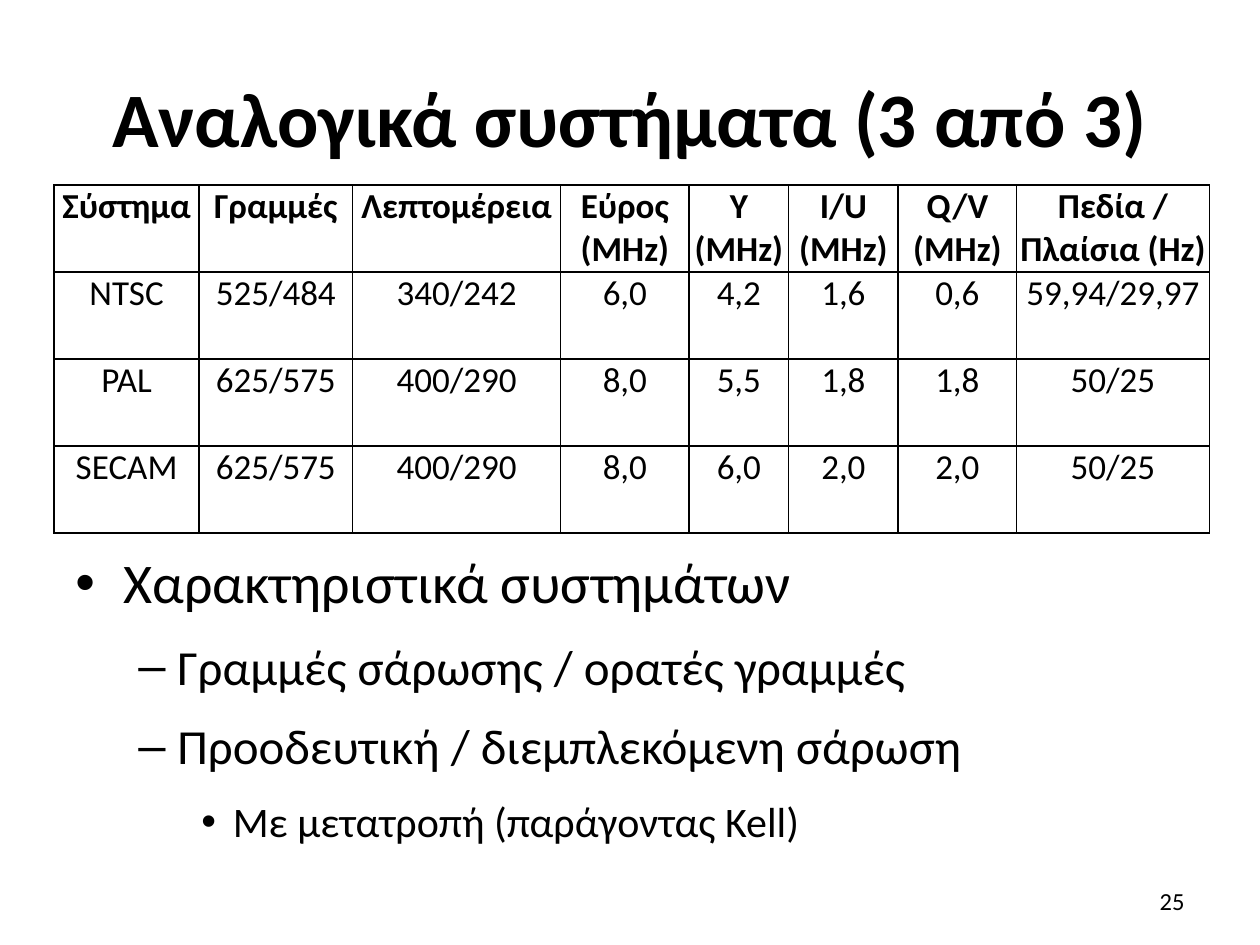
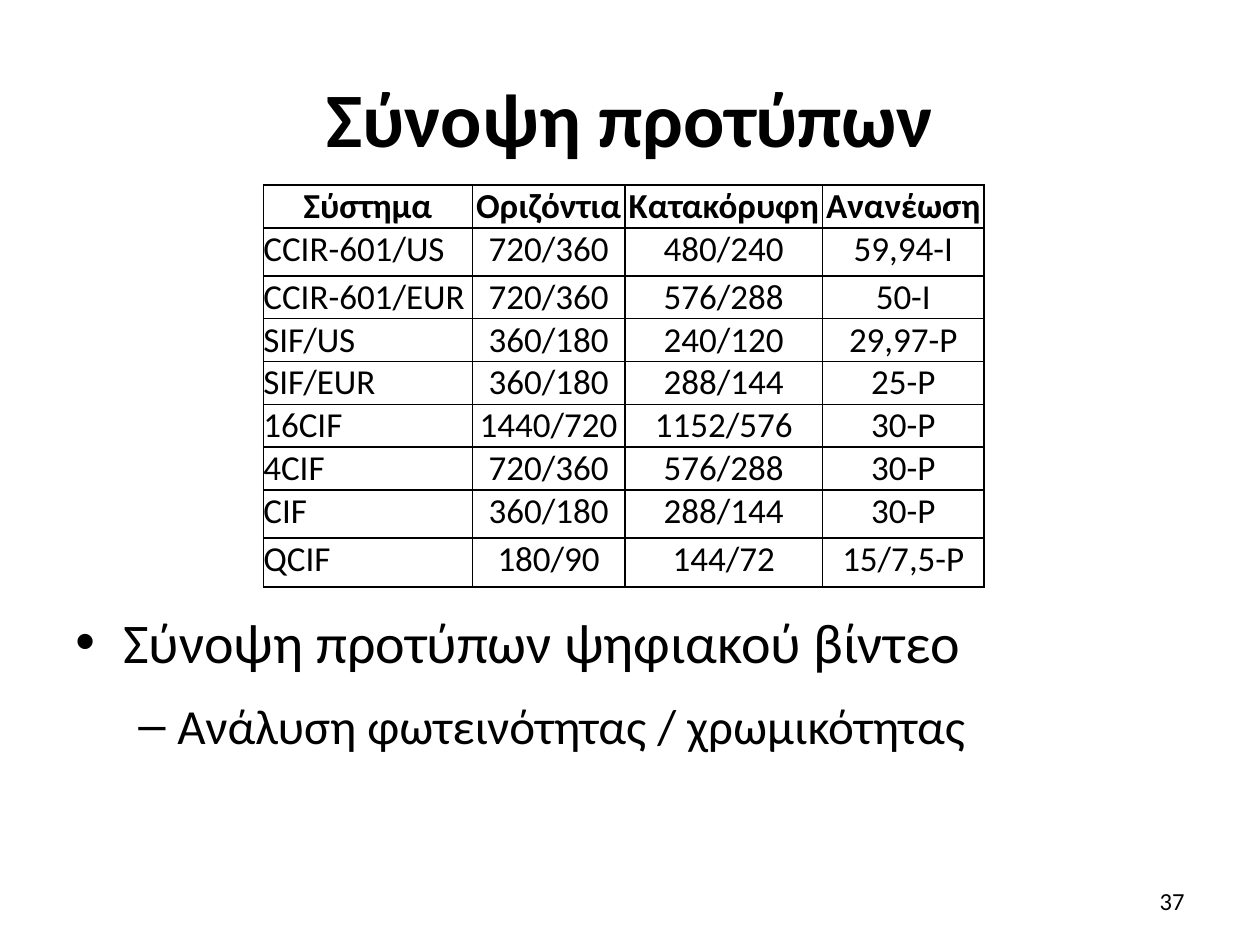
from dataclasses import dataclass
from typing import NamedTuple

import pptx
import pptx.dml.color
import pptx.enum.text
import pptx.oxml.ns
import pptx.util
from lxml import etree

PX = 9144
FONT = "Calibri"
BLACK = "000000"
WHITE = "FFFFFF"
ALIGN = pptx.enum.text.PP_ALIGN
ANCHOR = pptx.enum.text.MSO_ANCHOR


class Box(NamedTuple):
    left: int
    top: int
    width: int
    height: int


class Level(NamedTuple):
    bullet: str
    size: int
    margin: int
    hanging: int


class Point(NamedTuple):
    level: int
    text: str


@dataclass
class Grid:
    left: int
    columns: list[int]
    heights: list[int]
    rows: list[list[str]]
    label_align: ALIGN


@dataclass
class Page:
    title: str
    grid: Grid
    body_top: int
    points: list[Point]
    number: int


TITLE_BOX = Box(50, 30, 900, 125)
NUMBER_BOX = Box(717, 695, 233, 40)
GRID_TOP = 147
BODY_BOTTOM = 670
LEVELS = [Level("•", 32, 38, 38), Level("–", 28, 81, 31), Level("•", 24, 125, 25)]

PAGES = [
    Page(
        "Αναλογικά συστήματα (3 από 3)",
        Grid(
            43,
            [115, 122, 165, 102, 79, 87, 94, 153],
            [69] * 4,
            [
                ["Σύστημα", "Γραμμές", "Λεπτομέρεια", "Εύρος (MHz)", "Y (MHz)",
                 "I/U (MHz)", "Q/V (MHz)", "Πεδία / Πλαίσια (Hz)"],
                ["NTSC", "525/484", "340/242", "6,0", "4,2", "1,6", "0,6", "59,94/29,97"],
                ["PAL", "625/575", "400/290", "8,0", "5,5", "1,8", "1,8", "50/25"],
                ["SECAM", "625/575", "400/290", "8,0", "6,0", "2,0", "2,0", "50/25"],
            ],
            ALIGN.CENTER,
        ),
        430,
        [
            Point(0, "Χαρακτηριστικά συστημάτων"),
            Point(1, "Γραμμές σάρωσης / ορατές γραμμές"),
            Point(1, "Προοδευτική / διεμπλεκόμενη σάρωση"),
            Point(2, "Με μετατροπή (παράγοντας Kell)"),
        ],
        25,
    ),
    Page(
        "Σύνοψη προτύπων",
        Grid(
            209,
            [166, 121, 157, 128],
            [34, 38, 34, 34, 34, 34, 34, 38, 39],
            [
                ["Σύστημα", "Οριζόντια", "Κατακόρυφη", "Ανανέωση"],
                ["CCIR-601/US", "720/360", "480/240", "59,94-I"],
                ["CCIR-601/EUR", "720/360", "576/288", "50-I"],
                ["SIF/US", "360/180", "240/120", "29,97-P"],
                ["SIF/EUR", "360/180", "288/144", "25-P"],
                ["16CIF", "1440/720", "1152/576", "30-P"],
                ["4CIF", "720/360", "576/288", "30-P"],
                ["CIF", "360/180", "288/144", "30-P"],
                ["QCIF", "180/90", "144/72", "15/7,5-P"],
            ],
            ALIGN.LEFT,
        ),
        477,
        [
            Point(0, "Σύνοψη προτύπων ψηφιακού βίντεο"),
            Point(1, "Ανάλυση φωτεινότητας / χρωμικότητας"),
        ],
        37,
    ),
]


def px(length: int) -> pptx.util.Emu:
    return pptx.util.Emu(length * PX)


def rgb(value: str) -> pptx.dml.color.RGBColor:
    return pptx.dml.color.RGBColor.from_string(value)


def child(parent, tag: str, **attributes: str):
    return etree.SubElement(parent, pptx.oxml.ns.qn(tag), attributes)


def add_run(p, text: str, size: int, bold: bool = False) -> None:
    r = p.add_run()
    r.text = text
    r.font.name = FONT
    r.font.size = pptx.util.Pt(size)
    r.font.bold = bold
    r.font.color.rgb = rgb(BLACK)


def add_box(s, box: Box, anchor: ANCHOR):
    sp = s.shapes.add_textbox(*map(px, box))
    tf = sp.text_frame
    tf.word_wrap = True
    tf.vertical_anchor = anchor
    return tf


def add_line(s, box: Box, text: str, size: int, align: ALIGN, bold: bool = False) -> None:
    p = add_box(s, box, ANCHOR.MIDDLE).paragraphs[0]
    p.alignment = align
    add_run(p, text, size, bold)


def add_points(s, top: int, points: list[Point]) -> None:
    tf = add_box(s, Box(50, top, 900, BODY_BOTTOM - top), ANCHOR.TOP)
    for i, point in enumerate(points):
        level = LEVELS[point.level]
        p = tf.paragraphs[0] if i == 0 else tf.add_paragraph()
        p.level = point.level
        p.space_before = pptx.util.Pt(12)
        pPr = p._p.get_or_add_pPr()
        pPr.set("marL", str(px(level.margin)))
        pPr.set("indent", str(-px(level.hanging)))
        child(pPr, "a:buFont", typeface="Arial")
        child(pPr, "a:buChar", char=level.bullet)
        add_run(p, point.text, level.size)


def add_borders(cell) -> None:
    tcPr = cell._tc.get_or_add_tcPr()
    for side in "LRTB":
        ln = child(tcPr, f"a:ln{side}", w=str(pptx.util.Pt(1)))
        child(child(ln, "a:solidFill"), "a:srgbClr", val=BLACK)


def add_grid(s, grid: Grid) -> None:
    box = Box(grid.left, GRID_TOP, sum(grid.columns), sum(grid.heights))
    table = s.shapes.add_table(len(grid.rows), len(grid.columns), *map(px, box)).table
    table.first_row = False
    table.horz_banding = False
    for column, width in zip(table.columns, grid.columns):
        column.width = px(width)
    for row, height in zip(table.rows, grid.heights):
        row.height = px(height)
    for i, texts in enumerate(grid.rows):
        for j, text in enumerate(texts):
            cell = table.cell(i, j)
            cell.margin_left = cell.margin_right = cell.margin_top = cell.margin_bottom = 0
            add_borders(cell)
            cell.fill.background()
            p = cell.text_frame.paragraphs[0]
            p.alignment = grid.label_align if i and j == 0 else ALIGN.CENTER
            add_run(p, text, 20, bold=i == 0)


def add_page(prs, page: Page) -> None:
    s = prs.slides.add_slide(prs.slide_layouts[6])
    s.background.fill.solid()
    s.background.fill.fore_color.rgb = rgb(WHITE)
    add_line(s, TITLE_BOX, page.title, 44, ALIGN.CENTER, bold=True)
    add_points(s, page.body_top, page.points)
    add_grid(s, page.grid)
    add_line(s, NUMBER_BOX, str(page.number), 14, ALIGN.RIGHT)


def main() -> None:
    prs = pptx.Presentation()
    prs.slide_width = px(1000)
    prs.slide_height = px(750)
    for page in PAGES:
        add_page(prs, page)
    prs.save("out.pptx")


if __name__ == "__main__":
    main()
